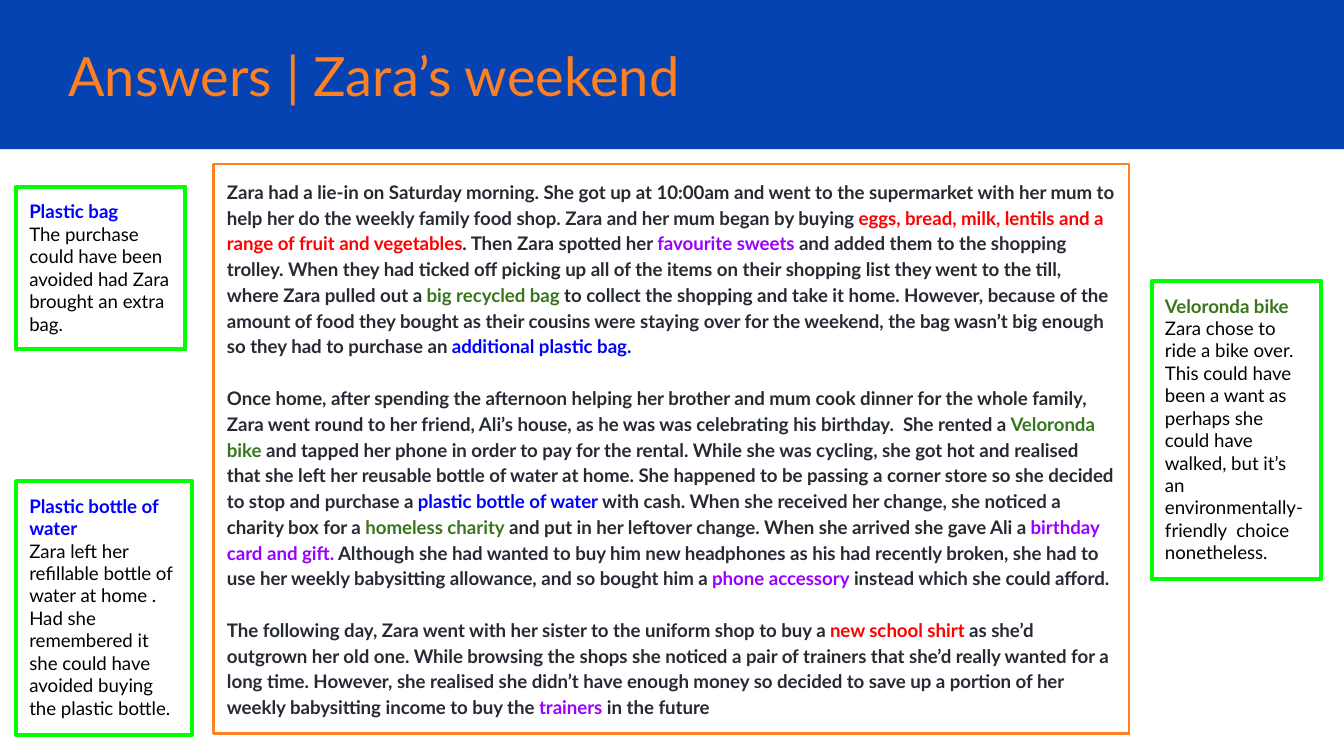
from dataclasses import dataclass

from pptx import Presentation
from pptx.dml.color import RGBColor
from pptx.enum.shapes import MSO_SHAPE
from pptx.enum.text import MSO_ANCHOR, PP_ALIGN
from pptx.util import Inches, Pt

RECT = MSO_SHAPE.RECTANGLE
TOP, MIDDLE = MSO_ANCHOR.TOP, MSO_ANCHOR.MIDDLE
LEFT = PP_ALIGN.LEFT


@dataclass(frozen=True)
class Theme:
    font: str = "Lato"
    title_size: float = 29
    body_size: float = 10
    white: str = "FFFFFF"
    banner: str = "0543B3"
    accent: str = "FF8022"
    note_line: str = "00FF00"
    black: str = "000000"
    ink: str = "262A33"
    need: str = "FF0000"
    want: str = "9900FF"
    green: str = "38761D"
    avoidable: str = "0000FF"


THEME = Theme()
INK, NEED, WANT = THEME.ink, THEME.need, THEME.want
GREEN, AVOIDABLE = THEME.green, THEME.avoidable

# Each story paragraph is a list of (text, colour) runs
STORY = [
    [
        ("Zara had a lie-in on Saturday morning. She got up at 10:00am and went to the "
         "supermarket with her mum to help her do the weekly family food shop. Zara and "
         "her mum began by buying", INK),
        (" eggs, bread, milk, lentils and a range of fruit and vegetables", NEED),
        (". Then Zara spotted her ", INK),
        ("favourite sweets", WANT),
        (" and added them to the shopping trolley. When they had ticked off picking up all "
         "of the items on their shopping list they went to the till, where Zara pulled "
         "out a ", INK),
        ("big recycled bag ", GREEN),
        ("to collect the shopping and take it home. However, because of the amount of food "
         "they bought as their cousins were staying over for the weekend, the bag wasn’t "
         "big enough so they had to purchase an ", INK),
        ("additional plastic bag.", AVOIDABLE),
    ],
    [
        ("Once home, after spending the afternoon helping her brother and mum cook dinner "
         "for the whole family, Zara went round to her friend, Ali’s house, as he was was "
         "celebrating his birthday.  She rented a ", INK),
        ("Veloronda bike ", GREEN),
        ("and tapped her phone in order to pay for the rental. While she was cycling, she "
         "got hot and realised that she left her reusable bottle of water at home. She "
         "happened to be passing a corner store so she decided to stop and purchase a ", INK),
        ("plastic bottle of water ", AVOIDABLE),
        ("with cash. When she received her change, she noticed a charity box for a ", INK),
        ("homeless charity", GREEN),
        (" and put in her leftover change. When she arrived she gave Ali a ", INK),
        ("birthday card and gift.", WANT),
        (" Although she had wanted to buy him new headphones as his had recently broken, "
         "she had to use her weekly babysitting allowance, and so bought him a ", INK),
        ("phone accessory", WANT),
        (" instead which she could afford.", INK),
    ],
    [
        ("The following day, Zara went with her sister to the uniform shop to buy a ", INK),
        ("new school shirt", NEED),
        (" as she’d outgrown her old one. While browsing the shops she noticed a pair of "
         "trainers that she’d really wanted for a long time. However, she realised she "
         "didn’t have enough money so decided to save up a portion of her weekly "
         "babysitting income to buy the ", INK),
        ("trainers", WANT),
        (" in the future", INK),
    ],
]

# Box, heading, heading colour, explanation
NOTES = [
    ((0.12, 1.39, 1.26, 1.21), "Plastic bag", AVOIDABLE,
     "The purchase could have been avoided had Zara brought an extra bag."),
    ((0.12, 3.58, 1.31, 1.89), "Plastic bottle of water", AVOIDABLE,
     "Zara left her refillable bottle of water at home . Had she remembered it she could "
     "have avoided buying the plastic bottle."),
    ((8.57, 2.09, 1.26, 2.22), "Veloronda bike", GREEN,
     "Zara chose to ride a bike over. This could have been a want as perhaps she could "
     "have walked, but it’s an environmentally-friendly  choice nonetheless."),
]


def rgb(value):
    return RGBColor.from_string(value)


def add_rect(slide, box, fill=None, line=None, width=1.5):
    sp = slide.shapes.add_shape(RECT, *map(Inches, box))
    sp.shadow.inherit = False
    if fill:
        sp.fill.solid()
        sp.fill.fore_color.rgb = rgb(fill)
    else:
        sp.fill.background()
    if line:
        sp.line.color.rgb = rgb(line)
        sp.line.width = Pt(width)
    else:
        sp.line.fill.background()
    return sp


def setup_frame(sp, anchor=TOP):
    tf = sp.text_frame
    tf.word_wrap = True
    tf.vertical_anchor = anchor
    tf.margin_left = tf.margin_right = tf.margin_top = tf.margin_bottom = Inches(0.1)
    return tf


def add_run(p, text, size=THEME.body_size, color=THEME.ink, bold=False):
    r = p.add_run()
    r.text = text
    r.font.name = THEME.font
    r.font.size = Pt(size)
    r.font.bold = bold
    r.font.color.rgb = rgb(color)


def add_paragraph(tf, index, spacing=1.0, gap=0):
    p = tf.add_paragraph() if index else tf.paragraphs[0]
    p.alignment = LEFT
    p.line_spacing = spacing
    if index and gap:
        p.space_before = Pt(gap)
    return p


def add_banner(slide, box, title):
    left, top, width, _ = box
    add_rect(slide, box, fill=THEME.banner)
    title_box = (left + 0.41, top + 0.28, width - 1.53, 0.56)
    tf = setup_frame(slide.shapes.add_textbox(*map(Inches, title_box)), MIDDLE)
    add_run(add_paragraph(tf, 0), title, size=THEME.title_size, color=THEME.accent)


def add_story(slide, box, paragraphs):
    tf = setup_frame(add_rect(slide, box, fill=THEME.white, line=THEME.accent))
    for i, runs in enumerate(paragraphs):
        p = add_paragraph(tf, i, spacing=1.15, gap=13.8)
        for text, color in runs:
            add_run(p, text, color=color, bold=True)


def add_note(slide, box, heading, color, body):
    tf = setup_frame(add_rect(slide, box, line=THEME.note_line, width=2.25))
    add_run(add_paragraph(tf, 0), heading, color=color, bold=True)
    add_run(add_paragraph(tf, 1), body, color=THEME.black)


def main():
    prs = Presentation()
    # Widescreen, 16:9
    prs.slide_width, prs.slide_height = Inches(10), Inches(10 * 9 / 16)
    slide = prs.slides.add_slide(prs.slide_layouts[6])

    # Title banner
    add_banner(slide, (0, 0, 10, 1.11), "Answers | Zara’s weekend")
    # Colour-coded story
    add_story(slide, (1.59, 1.22, 6.81, 4.24), STORY)
    # Explanations at either side
    for note in NOTES:
        add_note(slide, *note)

    prs.save("out.pptx")


if __name__ == "__main__":
    main()
